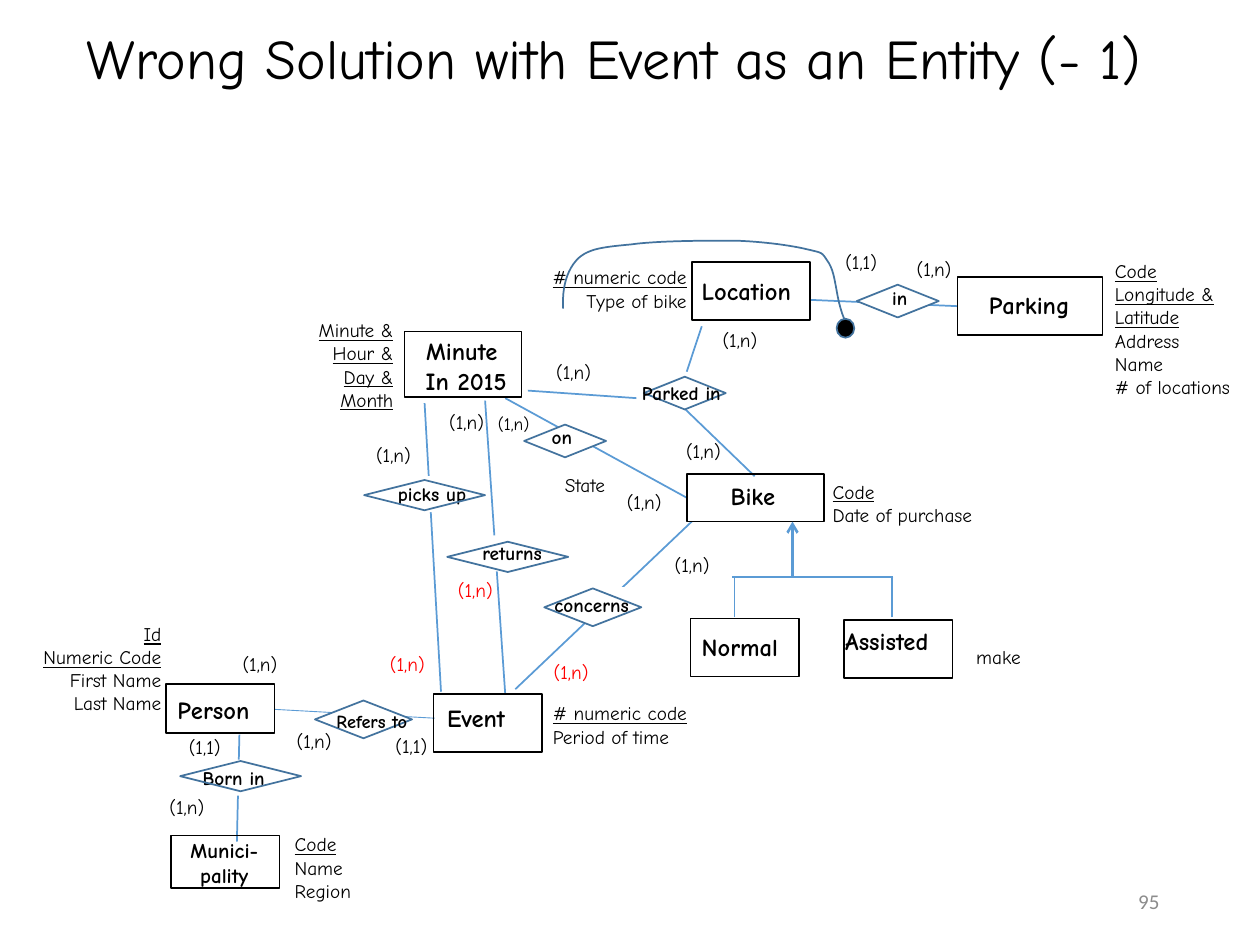
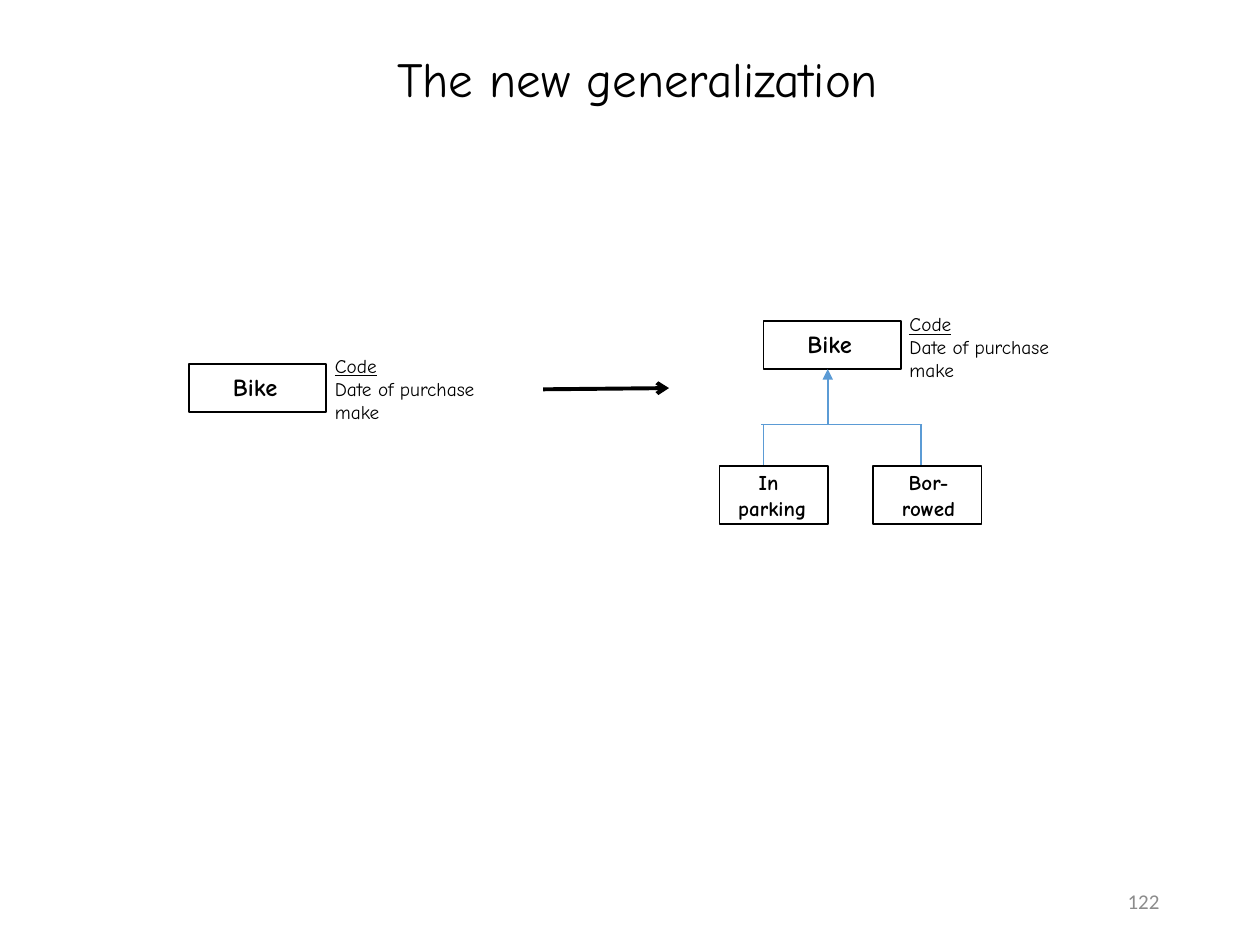
from dataclasses import dataclass
from typing import Any

from lxml.etree import SubElement
from pptx import Presentation
from pptx.dml.color import RGBColor
from pptx.enum.shapes import MSO_CONNECTOR, MSO_SHAPE
from pptx.enum.text import MSO_ANCHOR, MSO_AUTO_SIZE, PP_ALIGN
from pptx.oxml.ns import qn
from pptx.util import Inches, Pt

W, H = Inches(10), Inches(7.5)
COL, ROW = W / 10, H / 7.5
BLACK, WHITE, RED, GREY = "000000", "FFFFFF", "FF0000", "8C8C8C"
LINK, EDGE = "5B9BD5", "43739E"
FONT, NUMBER_FONT = "Comic Neue", "Calibri"
LEFT, CENTER, RIGHT = PP_ALIGN.LEFT, PP_ALIGN.CENTER, PP_ALIGN.RIGHT


def rgb(value):
    """Turn a hex string into a colour."""
    return RGBColor.from_string(value)


def write(tf, text, size=11, color=BLACK, bold=False, align=LEFT, font=FONT,
          keys=0, spacing=None):
    """Write one paragraph per line of text, underlining the first keys lines."""
    for i, line in enumerate(text.split("\n")):
        p = tf.paragraphs[0] if i == 0 else tf.add_paragraph()
        p.alignment = align
        if spacing:
            p.line_spacing = spacing
        r = p.add_run()
        r.text = line
        r.font.name, r.font.size, r.font.bold = font, Pt(size), bold
        r.font.underline = i < keys
        r.font.color.rgb = rgb(color)


@dataclass
class Area:
    """A region of a slide whose parts are placed in columns and rows from its corner."""
    s: Any
    left: float = 0
    top: float = 0

    def at(self, x, y):
        """Convert a place in the region to slide lengths."""
        return round((self.left + x) * COL), round((self.top + y) * ROW)

    def shape(self, kind, x, y, w, h, edge=BLACK, fill=None):
        """Draw an outlined preset shape."""
        sp = self.s.shapes.add_shape(kind, *self.at(x, y), round(w * COL), round(h * ROW))
        sp.shadow.inherit = False
        sp.line.color.rgb, sp.line.width = rgb(edge), Pt(1)
        if fill:
            sp.fill.solid()
            sp.fill.fore_color.rgb = rgb(fill)
        else:
            sp.fill.background()
        return sp

    def label(self, text, x, y, w, fill=None, size=11, **fmt):
        """Write an unwrapped label as tall as its lines."""
        h = 0.1 + len(text.split("\n")) * size * 1.21 / 72
        sp = self.s.shapes.add_textbox(*self.at(x, y), round(w * COL), round(h * ROW))
        tf = sp.text_frame
        tf.word_wrap, tf.auto_size = False, MSO_AUTO_SIZE.SHAPE_TO_FIT_TEXT
        if fill:
            sp.fill.solid()
            sp.fill.fore_color.rgb = rgb(fill)
        write(tf, text, size=size, **fmt)

    def line(self, x1, y1, x2, y2, color=LINK, width=1, head=None):
        """Draw a straight line, with an arrowhead at its end if asked."""
        c = self.s.shapes.add_connector(MSO_CONNECTOR.STRAIGHT, *self.at(x1, y1), *self.at(x2, y2))
        c.line.color.rgb, c.line.width = rgb(color), Pt(width)
        if head:
            SubElement(c.line._get_or_add_ln(), qn("a:tailEnd"), type=head)
        SubElement(c._element.spPr, qn("a:effectLst"))

    def lines(self, *ends):
        """Draw several plain links."""
        for end in ends:
            self.line(*end)

    def entity(self, name, box, name_at, size=14, align=LEFT):
        """Draw an entity box and its name."""
        self.label(name, *name_at, size=size, bold=True, align=align)
        self.shape(MSO_SHAPE.RECTANGLE, *box)

    def relation(self, name, box, name_at, masked=False, size=11):
        """Draw a relationship diamond; a masked one has its white ground under the name."""
        fmt = dict(size=size, bold=True, align=RIGHT)
        if masked:
            self.label(name, *name_at, fill=WHITE, **fmt)
            self.shape(MSO_SHAPE.DIAMOND, *box, edge=EDGE)
        else:
            self.shape(MSO_SHAPE.DIAMOND, *box, edge=EDGE, fill=WHITE)
            self.label(name, *name_at, **fmt)

    def cards(self, *places, text="(1,n)", color=BLACK):
        """Write the same cardinality at several places."""
        for x, y in places:
            self.label(text, x, y, 0.51, color=color, align=RIGHT)

    def bike(self, x, y, attributes, rise):
        """Draw the Bike entity with its attributes beside it."""
        self.entity("Bike", (x, y, 1.09, 0.38), (x + 0.25, y + 0.01, 0.6))
        self.label(attributes, x + 1.06, y - rise, 1.44, keys=1)

    def generalization(self, x, y, shaft, tip, head, width):
        """Draw the bracket of two children and the arrow to their parent."""
        self.lines((x + 1.28, y, x, y), (x + 0.02, y + 0.32, x + 0.02, y),
                   (x + 1.27, y + 0.32, x + 1.27, y))
        self.line(x + shaft, y, x + shaft, y - tip, width=width, head=head)

    def curve(self, start, *segments, steps=12):
        """Draw a smooth open outline through cubic segments."""
        points, a = [], start
        for b, c, d in segments:
            for t in (i / steps for i in range(1, steps + 1)):
                u = 1 - t
                weights = u ** 3, 3 * u * u * t, 3 * u * t * t, t ** 3
                points.append(self.at(*(sum(k * q[n] for k, q in zip(weights, (a, b, c, d)))
                                        for n in (0, 1))))
            a = d
        builder = self.s.shapes.build_freeform(*self.at(*start))
        builder.add_line_segments(points, close=False)
        sp = builder.convert_to_shape()
        sp.shadow.inherit = False
        sp.fill.background()
        sp.line.color.rgb, sp.line.width = rgb(EDGE), Pt(1)


def new_slide(prs, title, box, size, number):
    """Add a slide with its title and page number."""
    s = prs.slides.add_slide(prs.slide_layouts[5])
    sp = s.shapes.title
    x, y, w, h = box
    sp.left, sp.top = round(x * COL), round(y * ROW)
    sp.width, sp.height = round(w * COL), round(h * ROW)
    tf = sp.text_frame
    tf.auto_size, tf.vertical_anchor = MSO_AUTO_SIZE.NONE, MSO_ANCHOR.MIDDLE
    write(tf, title, size=size, align=CENTER, spacing=0.9)
    sp = s.shapes.add_textbox(round(7.05 * COL), round(6.95 * ROW),
                              round(2.25 * COL), round(0.4 * ROW))
    tf = sp.text_frame
    tf.word_wrap, tf.vertical_anchor = True, MSO_ANCHOR.MIDDLE
    write(tf, number, size=12, color=GREY, font=NUMBER_FONT, align=RIGHT)
    return s


def parking_region(a):
    """Draw Location, Parking and the external identifier."""
    a.line(2.43, 0.48, 3.6, 0.53)
    a.relation("in", (2.8, 0.36, 0.65, 0.26), (2.97, 0.32, 0.33))
    a.entity("Location", (1.49, 0.18, 0.94, 0.46), (1.47, 0.24, 0.98))
    a.entity("Parking", (3.6, 0.3, 1.15, 0.46), (3.75, 0.35, 0.88))
    a.label("# numeric code\nType of bike", 0.23, 0.16, 1.32, keys=1, align=RIGHT)
    a.label("Code\nLongitude &\nLatitude\nAddress\nName\n# of locations",
            4.75, 0.11, 1.22, keys=3)
    a.cards((2.55, 0.04), text="(1,1)")
    a.cards((3.14, 0.09))
    a.shape(MSO_SHAPE.OVAL, 2.64, 0.63, 0.14, 0.15, edge=EDGE, fill=BLACK)
    a.curve((0.47, 0.55),
            ((0.46, 0.38), (0.5, 0.24), (0.59, 0.15)),
            ((0.68, 0.07), (0.8, 0.06), (1.01, 0.04)),
            ((1.22, 0.01), (1.61, 0.01), (1.84, 0.01)),
            ((2.08, 0.02), (2.29, 0.05), (2.41, 0.08)),
            ((2.54, 0.11), (2.52, 0.1), (2.58, 0.19)),
            ((2.64, 0.29), (2.63, 0.46), (2.7, 0.63)))


def time_region(a):
    """Draw Minute and the relationships that start from it."""
    a.lines((1.07, 0.8, 1.2, 3.09), (1.55, 0.78, 1.71, 3.11), (1.89, 0.7, 2.75, 0.76),
            (3.27, 0.19, 3.15, 0.55), (3.13, 0.84, 3.69, 1.38), (1.71, 0.76, 3.15, 1.55))
    a.relation("picks up", (0.59, 1.41, 0.96, 0.24), (0.7, 1.38, 0.8), masked=True)
    a.relation("returns", (1.25, 1.9, 0.96, 0.24), (1.36, 1.85, 0.74), masked=True)
    a.relation("on", (1.86, 0.97, 0.65, 0.26), (1.94, 0.93, 0.4))
    a.relation("Parked in", (2.81, 0.59, 0.65, 0.26), (2.52, 0.58, 1))
    a.label("State", 1.98, 1.31, 0.62, fill=WHITE, align=RIGHT)
    a.cards((1.98, 0.41), (3.01, 1.04), (3.3, 0.16), (1.13, 0.81), (0.55, 1.07), (2.54, 1.44))
    a.label("(1,n)", 1.52, 0.83, 0.48, size=10, align=RIGHT)
    a.cards((0.66, 2.73), (1.2, 2.14), color=RED)
    a.entity("Minute \nIn 2015", (0.91, 0.23, 0.93, 0.52), (0.91, 0.22, 0.98), align=CENTER)
    a.label("Minute &\nHour &\nDay &\nMonth", 0.07, 0.08, 0.85, keys=4, align=RIGHT)


def bike_region(a):
    """Draw Bike, its two kinds and its link to events."""
    a.line(1.49, 0.44, 0.09, 1.77)
    a.relation("concerns", (0.32, 0.97, 0.77, 0.3), (0.25, 0.96, 0.84), masked=True)
    a.cards((1.22, 0.64))
    a.cards((0.26, 1.49), color=RED)
    a.bike(1.45, 0.06, "Code\nDate of purchase", 0)
    a.generalization(1.81, 0.88, 0.48, 0.44, "arrow", 1.5)
    a.entity("Normal", (1.48, 1.21, 0.86, 0.46), (1.47, 1.27, 0.88))
    a.entity("Assisted", (2.7, 1.22, 0.86, 0.46), (2.61, 1.22, 1.01))
    a.label("make", 3.63, 1.37, 0.57, align=RIGHT)


def person_region(a):
    """Draw Person, Event and Municipality."""
    a.line(3.35, 0.9, 2.08, 0.83, width=0.5)
    a.line(1.8, 1.03, 1.78, 1.88)
    a.relation("Refers to", (2.4, 0.76, 0.77, 0.3), (2.31, 0.79, 0.92), size=10.5)
    a.relation("Born in", (1.33, 1.24, 0.96, 0.24), (1.38, 1.23, 0.72), masked=True)
    a.entity("Person", (1.22, 0.63, 0.86, 0.39), (1.21, 0.67, 0.82))
    a.entity("Event", (3.34, 0.71, 0.86, 0.46), (3.35, 0.73, 0.73))
    a.entity("Munici-\npality", (1.26, 1.83, 0.86, 0.42), (1.17, 1.8, 1.02),
             size=12, align=CENTER)
    a.label("Id\nNumeric Code\nFirst Name\nLast Name", 0.08, 0.09, 1.2, keys=2, align=RIGHT)
    a.label("# numeric code\nPeriod of time", 4.19, 0.72, 1.32, keys=1)
    a.label("Code\nName\nRegion", 2.14, 1.76, 0.67, keys=1)
    a.cards((1.11, 1.46), (2.12, 0.94), (1.69, 0.33))
    a.cards((2.88, 0.98), (1.24, 0.99), text="(1,1)")


def before_region(a):
    """Draw the single Bike entity and the arrow to its new form."""
    a.bike(0, 0, "Code\nDate of purchase\nmake", 0.13)
    a.line(2.81, 0.2, 3.81, 0.19, color=BLACK, width=2.25, head="arrow")


def after_region(a):
    """Draw Bike with its two new children."""
    a.bike(0.35, 0, "Code\nDate of purchase\nmake", 0.12)
    a.generalization(0.33, 0.82, 0.53, 0.44, "triangle", 1)
    a.entity("In \nparking", (0, 1.15, 0.86, 0.46), (0.03, 1.13, 0.78), size=12, align=CENTER)
    a.entity("Bor-\nrowed", (1.22, 1.15, 0.86, 0.46), (1.32, 1.13, 0.68), size=12, align=CENTER)


def main():
    """Build both slides and save them."""
    prs = Presentation()
    prs.slide_width, prs.slide_height = W, H
    s = new_slide(prs, "Wrong Solution with Event as an Entity (- 1) ",
                  (0.05, 0.2, 9.8, 0.57), 32, "95")
    time_region(Area(s, 2.3, 2.4))
    bike_region(Area(s, 4, 3.7))
    person_region(Area(s, 0.1, 4.8))
    parking_region(Area(s, 4, 1.9))
    s = new_slide(prs, "The new generalization", (0.18, 0.45, 9.76, 0.39), 28, "122")
    before_region(Area(s, 1.5, 2.89))
    after_region(Area(s, 5.71, 2.55))
    prs.save("out.pptx")


if __name__ == "__main__":
    main()
